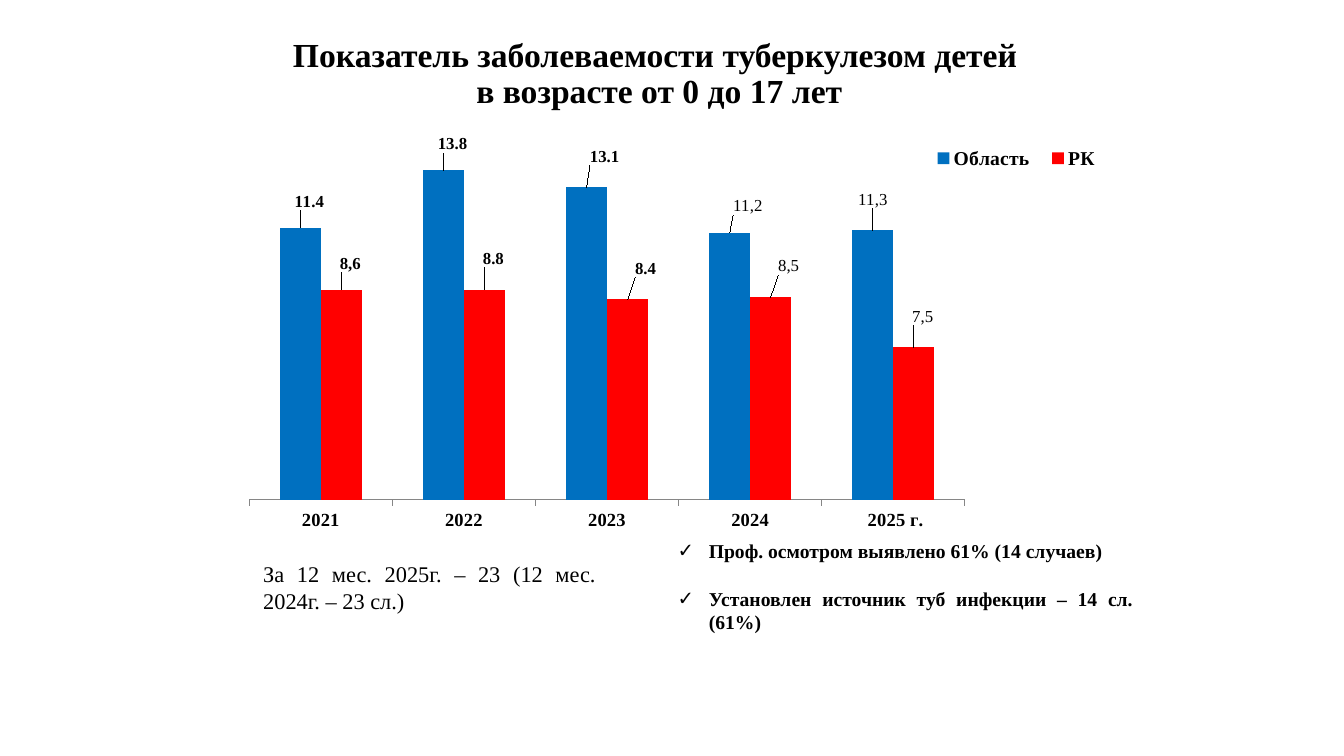
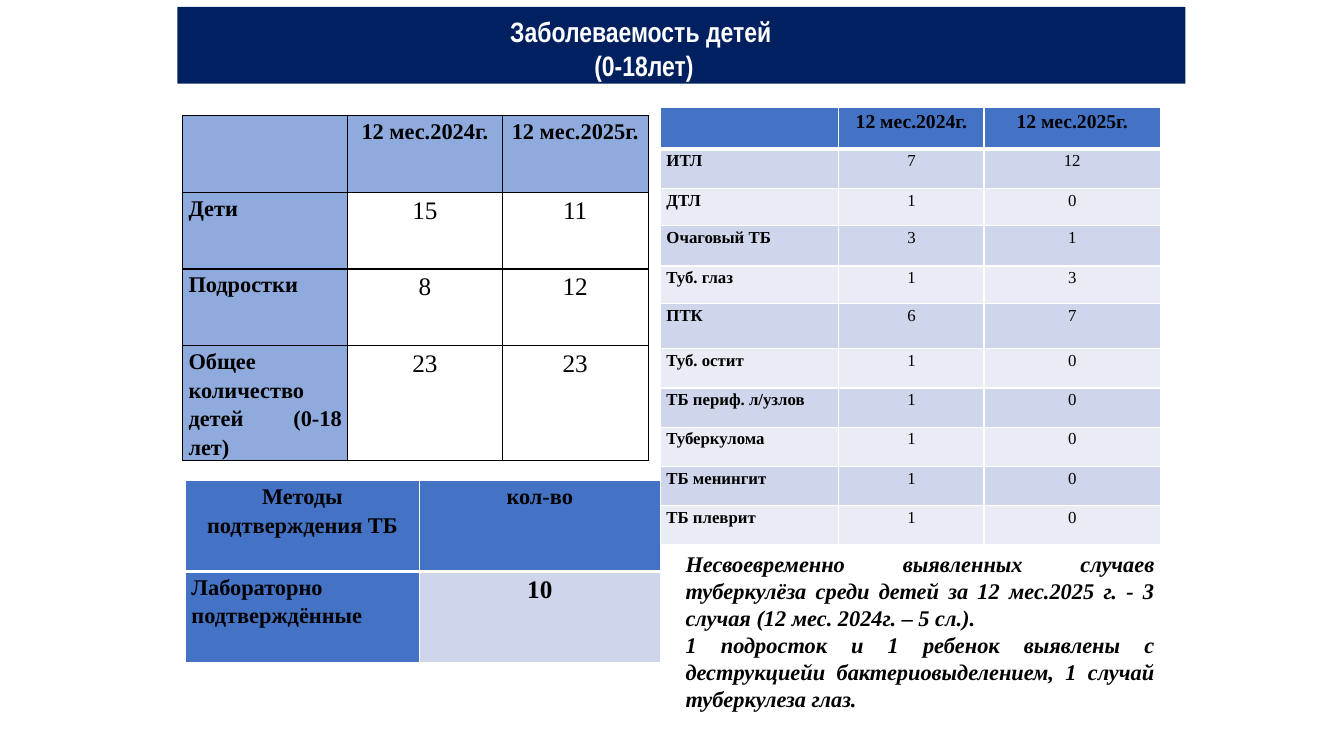
from lxml.etree import SubElement
from pptx import Presentation
from pptx.chart.data import CategoryChartData
from pptx.dml.color import RGBColor
from pptx.enum.chart import XL_CHART_TYPE as ChartType
from pptx.enum.chart import XL_LABEL_POSITION as LabelPosition
from pptx.enum.chart import XL_LEGEND_POSITION as LegendPosition
from pptx.enum.chart import XL_TICK_LABEL_POSITION as TickLabels
from pptx.enum.chart import XL_TICK_MARK as TickMark
from pptx.enum.shapes import MSO_SHAPE as Preset
from pptx.enum.text import MSO_ANCHOR as Anchor
from pptx.enum.text import MSO_AUTO_SIZE as AutoSize
from pptx.enum.text import PP_ALIGN as Align
from pptx.oxml import parse_xml
from pptx.oxml.ns import nsdecls, qn
from pptx.util import Inches, Pt

WIDTH, HEIGHT = Inches(13.33), Inches(7.5)
SERIF, NARROW = "Times New Roman", "Arial Narrow"
BLACK, WHITE, NAVY = "000000", "FFFFFF", "002060"
BLUE, RED, GREY = "0070C0", "FF0000", "868686"
HEADER, SOFT_BLUE, BANDS = "4472C4", "8FAADC", ("CFD5EA", "E9EBF5")
TITLE = {"size": Pt(24), "bold": True}
BAND_TITLE = {"size": Pt(20), "bold": True, "name": NARROW, "color": WHITE}
LIST = {"size": Pt(14), "bold": True}
NOTE = {"size": Pt(16)}
BOLD_NOTE = {"size": Pt(16), "bold": True, "italic": True}
LABEL = {"size": Pt(12), "bold": True}
HEAD, FIGURE = {"size": Pt(16), "bold": True}, {"size": Pt(18)}
SMALL_HEAD, SMALL_FIGURE = {"size": Pt(14), "bold": True}, {"size": Pt(12)}

# Label shifts from the bar ends, as shares of the chart's size
CHART_SERIES = (
    ("Область", BLUE, (11.4, 13.8, 13.1, 11.2, 11.3), {3: "11,2", 4: "11,3"},
     ((.01, -.03), (.01, -.03), (.02, -.04), (.02, -.03), (0, -.04))),
    ("РК", RED, (8.8, 8.8, 8.4, 8.5, 6.4), {0: "8,6", 3: "8,5", 4: "7,5"},
     ((.01, -.03), (.01, -.04), (.02, -.04), (.02, -.04), (.01, -.04))),
)
YEARS = ("2021", "2022", "2023", "2024", " 2025 г.")
PERIODS = ("", "12 мес.2024г.", "12 мес.2025г.")
AGE_ROWS = (PERIODS, ("Дети", "15", "11"), ("Подростки", "8", "12"),
            ("Общее количество детей (0-18 лет)", "23", "23"))
FORM_ROWS = (PERIODS, ("ИТЛ", "7", "12"), ("ДТЛ", "1", "0"),
             ("Очаговый ТБ", "3", "1"), ("Туб. глаз", "1", "3"),
             ("ПТК", "6", "7"), ("Туб. остит", "1", "0"),
             ("ТБ периф. л/узлов", "1", "0"), ("Туберкулома", "1", "0"),
             ("ТБ менингит", "1", "0"), ("ТБ плеврит", "1", "0"))
METHOD_ROWS = (("Методы подтверждения ТБ", "кол-во"),
               ("Лабораторно подтверждённые", "10"))


def grid_box(left, top, width, height):
    """Turn columns and rows of a 100 by 100 grid into slide lengths."""
    return tuple(round(share * side / 100) for share, side in
                 zip((left, top, width, height), (WIDTH, HEIGHT) * 2))


def rgb(color):
    return RGBColor.from_string(color)


def set_all(target, values):
    for name, value in values.items():
        setattr(target, name, value)


def format_font(font, style):
    values = {"name": SERIF, "bold": False, "color": BLACK, **style}
    font.color.rgb = rgb(values.pop("color"))
    set_all(font, values)


def paint(fill, color):
    fill.solid()
    fill.fore_color.rgb = rgb(color)


def write(frame, lines, style, align, spacing=1.0, gap=0):
    """Fill a text frame with one formatted paragraph per line."""
    for index, line in enumerate(lines):
        paragraph = frame.paragraphs[0] if index == 0 else frame.add_paragraph()
        set_all(paragraph, {"alignment": align, "line_spacing": spacing,
                            "space_before": Pt(gap if index else 0),
                            "space_after": Pt(0)})
        paragraph.text = line
        for run in paragraph.runs:
            format_font(run.font, style)


def place_text(shape, box, lines, style, align=Align.JUSTIFY,
               anchor=Anchor.TOP, spacing=1.0, gap=0):
    set_all(shape, dict(zip(("left", "top", "width", "height"), grid_box(*box))))
    frame = shape.text_frame
    set_all(frame, {"word_wrap": True, "auto_size": AutoSize.NONE,
                    "vertical_anchor": anchor})
    write(frame, lines, style, align, spacing, gap)


def set_bullets(shape, bullet=None, indent=0):
    for paragraph in shape.text_frame.paragraphs:
        properties = paragraph._p.get_or_add_pPr()
        properties.set("marL", str(Inches(indent)))
        properties.set("indent", str(-Inches(indent)))
        if bullet:
            SubElement(properties, qn("a:buChar")).set("char", bullet)
        else:
            SubElement(properties, qn("a:buNone"))


def manual_layout(x, y, width=None, height=None, inner=False):
    """Build a chart layout; without a size, x and y are label shifts."""
    parts = [("layoutTarget", "inner")] if inner else []
    if width:
        parts += [("xMode", "edge"), ("yMode", "edge")]
    parts += [("x", x), ("y", y)]
    if width:
        parts += [("w", width), ("h", height)]
    body = "".join(f'<c:{tag} val="{value}"/>' for tag, value in parts)
    return parse_xml(f'<c:layout {nsdecls("c")}><c:manualLayout>{body}'
                     '</c:manualLayout></c:layout>')


def set_layout(parent, layout, index):
    for old in parent.findall(qn("c:layout")):
        parent.remove(old)
    parent.insert(index, layout)


def label_series(series, texts, shifts):
    labels = series.data_labels
    set_all(labels, {"show_value": True, "position": LabelPosition.OUTSIDE_END})
    format_font(labels.font, LABEL)
    for index, shift in enumerate(shifts):
        label = series.points[index].data_label
        if index in texts:
            paragraph = label.text_frame.paragraphs[0]
            paragraph.text = texts[index]
            format_font(paragraph.runs[0].font, {**LABEL, "bold": index < 3})
        else:
            format_font(label.font, LABEL)
        label.position = LabelPosition.OUTSIDE_END
    for element, shift in zip(labels._element.findall(qn("c:dLbl")), shifts):
        set_layout(element, manual_layout(*shift), 1)


def add_rate_chart(slide, box):
    data = CategoryChartData()
    data.categories = YEARS
    for name, _, values, _, _ in CHART_SERIES:
        data.add_series(name, values)
    chart = slide.shapes.add_chart(ChartType.COLUMN_CLUSTERED,
                                   *grid_box(*box), data).chart
    set_all(chart, {"has_title": False, "has_legend": True})
    set_all(chart.font, {"name": "Calibri", "size": Pt(13.2)})
    set_all(chart.legend, {"position": LegendPosition.RIGHT,
                           "include_in_layout": False})
    format_font(chart.legend.font, LIST)
    set_layout(chart.legend._element, manual_layout(.78, .05, .21, .08), 1)

    plot = chart.plots[0]
    set_all(plot, {"gap_width": 150, "overlap": 0, "vary_by_categories": False})
    set_layout(plot._element.getparent(),
               manual_layout(.035, 0, .793, .852, inner=True), 0)
    set_all(chart.value_axis, {"minimum_scale": 0, "maximum_scale": 16,
                               "has_major_gridlines": False, "visible": False})
    axis = chart.category_axis
    set_all(axis, {"major_tick_mark": TickMark.OUTSIDE,
                   "tick_label_position": TickLabels.NEXT_TO_AXIS})
    axis.format.line.color.rgb = rgb(GREY)
    format_font(axis.tick_labels.font, {"size": Pt(13.2), "bold": True})
    for series, (_, color, _, texts, shifts) in zip(plot.series, CHART_SERIES):
        paint(series.format.fill, color)
        label_series(series, texts, shifts)


def set_borders(cell, color, bottom=1):
    properties = cell._tc.get_or_add_tcPr()
    for index, (side, width) in enumerate(zip("LRTB", (1, 1, 1, bottom))):
        properties.insert(index, parse_xml(
            f'<a:ln{side} {nsdecls("a")} w="{Pt(width)}"><a:solidFill>'
            f'<a:srgbClr val="{color}"/></a:solidFill></a:ln{side}>'))


def add_grid_table(slide, box, rows, columns, heights, look):
    """Add a table; columns and heights are its parts in hundredths of an inch.

    look(row, column) gives the fill, text style and alignment of a cell.
    """
    table = slide.shapes.add_table(len(rows), len(columns), *grid_box(*box)).table
    set_all(table, {"first_row": False, "horz_banding": False})
    for column, width in zip(table.columns, columns):
        column.width = Inches(width / 100)
    for row, height in zip(table.rows, heights):
        row.height = Inches(height / 100)
    for row, texts in enumerate(rows):
        for column, text in enumerate(texts):
            cell = table.cell(row, column)
            color, style, align = look(row, column)
            set_all(cell, {"margin_left": Inches(.06), "margin_right": Inches(.06),
                           "margin_top": 0, "margin_bottom": 0})
            write(cell.text_frame, (text,), style, align, 1.15)
            paint(cell.fill, color)
    return table


def cell_align(row, column):
    return Align.CENTER if row == 0 or column else Align.JUSTIFY


def age_look(row, column):
    plain = row and column
    return (WHITE if plain else SOFT_BLUE, FIGURE if plain else HEAD,
            cell_align(row, column))


def form_look(row, column):
    color = BANDS[(row - 1) % 2] if row else HEADER
    style = {**SMALL_FIGURE, "bold": column == 0} if row else SMALL_HEAD
    return color, style, cell_align(row, column)


def method_look(row, column):
    plain = row and column
    return (BANDS[0] if plain else HEADER,
            {**FIGURE, "bold": True} if plain else HEAD, cell_align(row, column))


def border_table(table, color, header_bottom=1):
    for row in range(len(table.rows)):
        for column in range(len(table.columns)):
            set_borders(table.cell(row, column), color, 1 if row else header_bottom)


def build_rate_slide(presentation):
    slide = presentation.slides.add_slide(presentation.slide_layouts[3])
    title, findings, note = slide.placeholders
    place_text(title, (15.15, 3.87, 67.8, 12),
               ("Показатель заболеваемости туберкулезом детей \v"
                "в возрасте от 0 до 17 лет",), TITLE, Align.CENTER, Anchor.MIDDLE, .9)
    add_rate_chart(slide, (16.2, 15.6, 67.14, 59.33))
    place_text(findings, (49.66, 70.67, 35.4, 13.87),
               ("Проф. осмотром выявлено 61% (14 случаев)",
                "Установлен источник туб инфекции – 14 сл. (61%)"), LIST, gap=17)
    set_bullets(findings, "✓", .31)
    place_text(note, (18.83, 73.47, 26.26, 8.53),
               ("За 12 мес. 2025г. – 23 (12 мес. 2024г. – 23 сл.)",), NOTE)
    set_bullets(note)


def build_table_slide(presentation):
    slide = presentation.slides.add_slide(presentation.slide_layouts[1])
    title, note = slide.placeholders
    band = slide.shapes.add_shape(Preset.RECTANGLE, *grid_box(13.2, .93, 75, 10.13))
    paint(band.fill, NAVY)
    band.line.fill.background()
    band.shadow.inherit = False
    title.element.addprevious(band.element)
    place_text(title, (34.43, 1.2, 26.5, 10.4), ("Заболеваемость детей", " (0-18лет)"),
               BAND_TITLE, Align.CENTER, Anchor.MIDDLE)

    ages = add_grid_table(slide, (13.58, 15.33, 34.66, 45.6), AGE_ROWS,
                          (164, 153, 145), (76, 76, 76, 114), age_look)
    border_table(ages, BLACK)
    forms = add_grid_table(slide, (49.14, 14.27, 37.2, 57.73), FORM_ROWS,
                           (177, 144, 175),
                           (41, 39, 37, 40, 37, 45, 39, 39, 39, 39, 38), form_look)
    border_table(forms, WHITE, 3)
    methods = add_grid_table(slide, (13.8, 63.6, 35.33, 24), METHOD_ROWS,
                             (232, 239), (90, 90), method_look)
    border_table(methods, WHITE, 3)
    place_text(note, (50.26, 72.13, 36.4, 26.93),
               ("Несвоевременно выявленных случаев туберкулёза среди детей "
                "за 12 мес.2025 г. - 3 случая (12 мес. 2024г. – 5 сл.).",
                "1 подросток и 1 ребенок выявлены с деструкциейи "
                "бактериовыделением, 1 случай туберкулеза глаз."), BOLD_NOTE)
    set_bullets(note)


def main():
    presentation = Presentation()
    set_all(presentation, {"slide_width": WIDTH, "slide_height": HEIGHT})
    build_rate_slide(presentation)
    build_table_slide(presentation)
    presentation.save("out.pptx")


if __name__ == "__main__":
    main()
